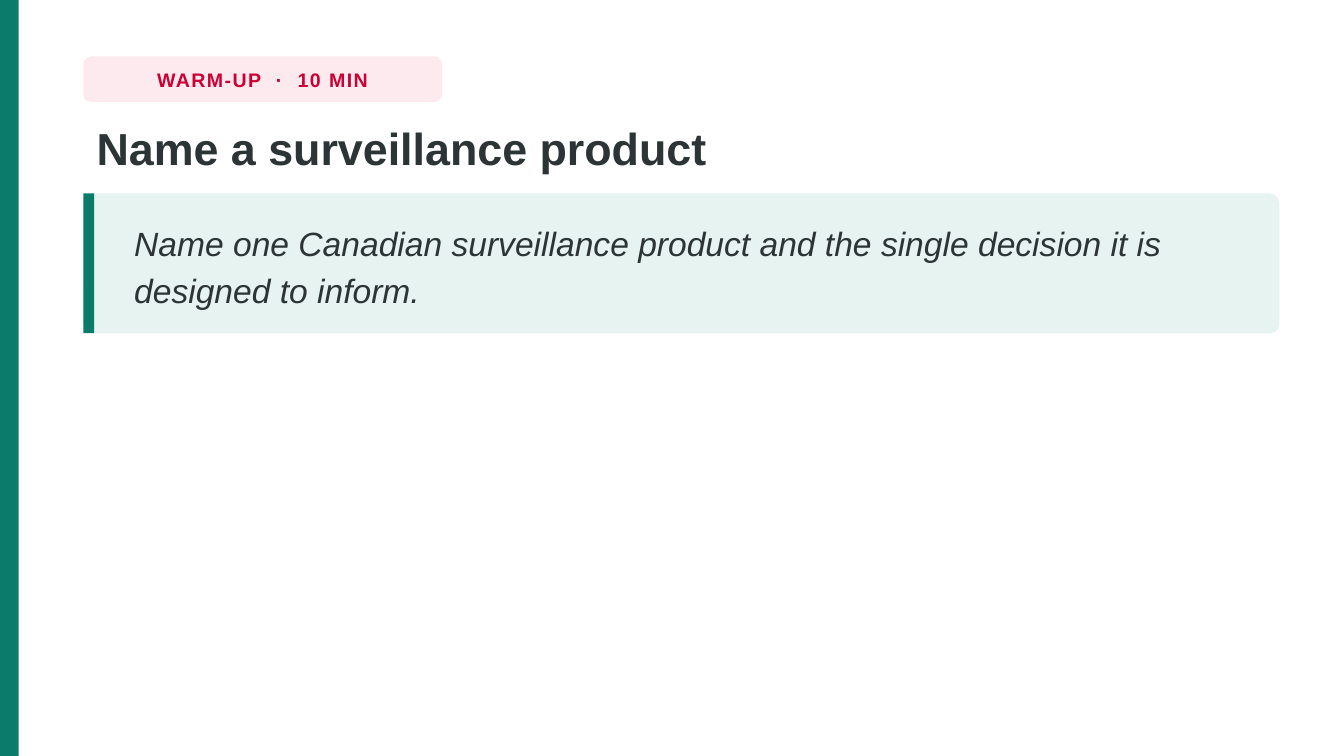
from dataclasses import dataclass

from pptx import Presentation
from pptx.dml.color import RGBColor
from pptx.enum import shapes, text
from pptx.util import Inches, Pt


@dataclass(frozen=True)
class Theme:
    font: str = "Arial"
    green: str = "0B7B6B"
    mint: str = "E6F3F0"
    pink: str = "FDEAEF"
    red: str = "CC0033"
    ink: str = "2D3436"
    label_size: float = 10.5
    title_size: float = 24
    prompt_size: float = 18


THEME = Theme()
SLIDE_WIDTH = 10
SLIDE_HEIGHT = SLIDE_WIDTH * 9 / 16
LEFT, CONTENT_WIDTH = 0.62, 8.9


def add_panel(page, left, top, width, height, color, radius=0):
    """Add a plain filled rectangle, rounded when a radius is given."""
    kind = shapes.MSO_SHAPE.ROUNDED_RECTANGLE if radius else shapes.MSO_SHAPE.RECTANGLE
    panel = page.shapes.add_shape(
        kind, Inches(left), Inches(top), Inches(width), Inches(height))
    if radius:
        panel.adjustments[0] = radius / min(width, height)
    panel.shadow.inherit = False
    panel.fill.solid()
    panel.fill.fore_color.rgb = RGBColor.from_string(color)
    panel.line.fill.background()


def add_text(page, left, top, width, height, words, size, color, *, bold=False,
             italic=False, middle=False, wrap=True, line_spacing=None):
    """Add a one-paragraph text box and return its paragraph."""
    box = page.shapes.add_textbox(
        Inches(left), Inches(top), Inches(width), Inches(height))
    frame = box.text_frame
    frame.text = words
    frame.word_wrap = wrap
    frame.vertical_anchor = text.MSO_ANCHOR.MIDDLE if middle else text.MSO_ANCHOR.TOP
    para = frame.paragraphs[0]
    if line_spacing:
        para.line_spacing = line_spacing
    font = para.runs[0].font
    font.name, font.size = THEME.font, Pt(size)
    font.bold, font.italic = bold, italic
    font.color.rgb = RGBColor.from_string(color)
    return para


def add_label(page, left, top, width, height, words):
    """Add a tinted label with centred, letter-spaced text."""
    add_panel(page, left, top, width, height, THEME.pink, radius=0.06)
    para = add_text(page, left, top, width, height, words, THEME.label_size,
                    THEME.red, bold=True, middle=True, wrap=False)
    para.alignment = text.PP_ALIGN.CENTER
    para.runs[0].font._element.set("spc", "80")


def add_prompt(page, left, top, width, height, words):
    """Add a tinted panel with an accent edge and italic text."""
    add_panel(page, left, top, width, height, THEME.mint, radius=0.07)
    add_panel(page, left, top, 0.08, height, THEME.green)
    add_text(page, left + 0.28, top + 0.05, width - 0.55, height - 0.1, words,
             THEME.prompt_size, THEME.ink, italic=True, middle=True,
             line_spacing=1.16)


def main():
    deck = Presentation()
    deck.slide_width, deck.slide_height = Inches(SLIDE_WIDTH), Inches(SLIDE_HEIGHT)
    page = deck.slides.add_slide(deck.slide_layouts[6])

    # Accent band along the left edge
    add_panel(page, 0, 0, 0.14, SLIDE_HEIGHT, THEME.green)

    # Heading
    add_label(page, LEFT, 0.42, 2.67, 0.34, "WARM-UP  ·  10 MIN")
    add_text(page, LEFT, 0.84, CONTENT_WIDTH, 0.56, "Name a surveillance product",
             THEME.title_size, THEME.ink, bold=True, line_spacing=1.02)

    # Question for the group
    add_prompt(page, LEFT, 1.44, CONTENT_WIDTH, 1.04,
               "Name one Canadian surveillance product and the single decision "
               "it is designed to inform.")

    deck.save("out.pptx")


if __name__ == "__main__":
    main()
